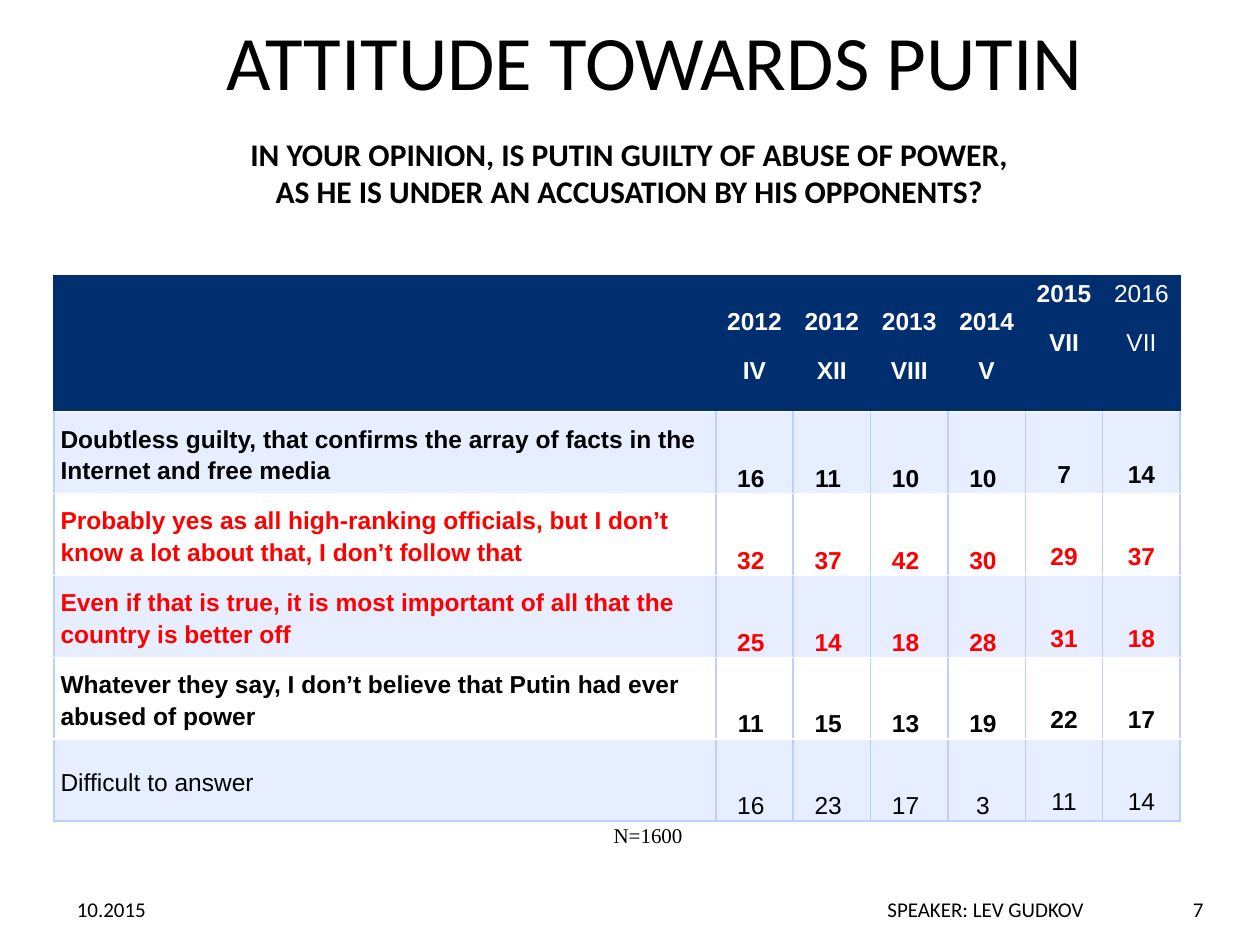
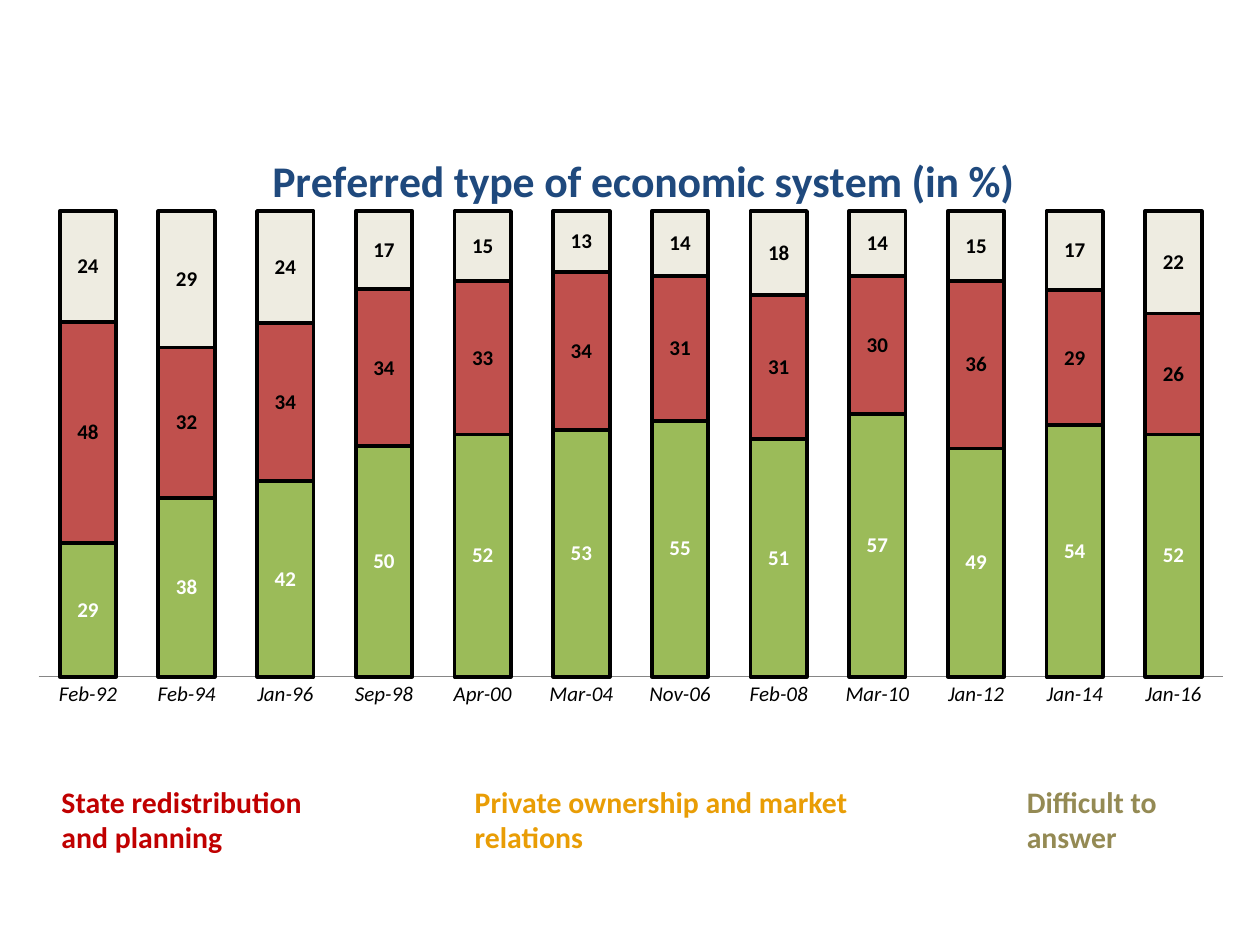
"""Two survey slides: a table of views on Putin and a chart of economic choices."""
from lxml.etree import SubElement
from pptx import Presentation
from pptx.chart.data import CategoryChartData
from pptx.dml.color import RGBColor
from pptx.enum.chart import XL_CHART_TYPE, XL_LABEL_POSITION, XL_TICK_MARK
from pptx.enum.text import MSO_ANCHOR, MSO_AUTO_SIZE, PP_ALIGN
from pptx.oxml import parse_xml
from pptx.oxml.ns import nsdecls, qn
from pptx.util import Cm, Pt

BLACK = RGBColor(0x00, 0x00, 0x00)
WHITE = RGBColor(0xFF, 0xFF, 0xFF)
NAVY = RGBColor(0x00, 0x2E, 0x6E)
PALE = RGBColor(0xE7, 0xEE, 0xFF)
EDGE = RGBColor(0xBA, 0xD1, 0xFF)
RED = RGBColor(0xFF, 0x00, 0x00)
BLUE = RGBColor(0x1F, 0x49, 0x7D)
GREEN = RGBColor(0x9B, 0xBB, 0x59)
BRICK = RGBColor(0xC0, 0x50, 0x4D)
CREAM = RGBColor(0xEE, 0xEC, 0xE1)
WINE = RGBColor(0xC0, 0x00, 0x00)
AMBER = RGBColor(0xE9, 0x9D, 0x05)
OLIVE = RGBColor(0x94, 0x8A, 0x54)
GREY = RGBColor(0x86, 0x86, 0x86)

LEFT, MID, RIGHT = PP_ALIGN.LEFT, PP_ALIGN.CENTER, PP_ALIGN.RIGHT
BASE = {"name": "Calibri", "size": 12, "bold": False, "color": BLACK}
CELL = {"name": "Arial", "size": 14}
SPACED = {"line_spacing": 1.15, "space_after": Pt(10)}

DATES = ["2012\nIV", "2012\nXII", "2013\nVIII", "2014\nV", "2015\nVII", "2016\nVII"]
VIEWS = [
    ("Doubtless guilty, that confirms the array of facts in the Internet and free media",
     [16, 11, 10, 10, 7, 14], {"bold": True}),
    ("Probably yes as all high-ranking officials, but I don’t know a lot about that, "
     "I don’t follow that", [32, 37, 42, 30, 29, 37], {"bold": True, "color": RED}),
    ("Even if that is true, it is most important of all that the country is better off",
     [25, 14, 18, 28, 31, 18], {"bold": True, "color": RED}),
    ("Whatever they say, I don’t believe that Putin had ever abused of power",
     [11, 15, 13, 19, 22, 17], {"bold": True}),
    ("Difficult to answer", [16, 23, 17, 3, 11, 14], {}),
]
MONTHS = ["Feb-92", "Feb-94", "Jan-96", "Sep-98", "Apr-00", "Mar-04",
          "Nov-06", "Feb-08", "Mar-10", "Jan-12", "Jan-14", "Jan-16"]
PARTS = [
    ("Series 1", [29, 38, 42, 50, 52, 53, 55, 51, 57, 49, 54, 52], GREEN, WHITE),
    ("Series 2", [48, 32, 34, 34, 33, 34, 31, 31, 30, 36, 29, 26], BRICK, BLACK),
    ("Series 3", [24, 29, 24, 17, 15, 13, 14, 18, 14, 15, 17, 22], CREAM, BLACK),
]
KEYS = [
    ("State redistribution and planning", 0.99, 6.35, WINE),
    ("Private ownership and market relations", 9.32, 9.4, AMBER),
    ("Difficult to answer", 20.45, 3.61, OLIVE),
]


class Deck:
    """Holds the shared style and the slide being built."""

    def __init__(self):
        self.prs = Presentation()
        self.prs.slide_width, self.prs.slide_height = Cm(25.4), Cm(19.05)
        self.slide = None

    def add(self, kind):
        """Start a slide on the given layout."""
        self.slide = self.prs.slides.add_slide(self.prs.slide_layouts[kind])

    def style(self, font, **fmt):
        """Set font values over the base style."""
        fmt = BASE | fmt
        font.color.rgb = fmt.pop("color")
        fmt["size"] = Pt(fmt["size"])
        for key, value in fmt.items():
            setattr(font, key, value)

    def put(self, frame, text, align=LEFT, space=None, **fmt):
        """Fill a frame with one paragraph a line."""
        for i, line in enumerate(text.split("\n")):
            para = frame.add_paragraph() if i else frame.paragraphs[0]
            para.alignment = align
            for key, value in (space or {}).items():
                setattr(para, key, value)
            run = para.add_run()
            run.text = line
            self.style(run.font, **fmt)

    def title(self, text, box):
        """Move and fill the title placeholder."""
        shape = self.slide.shapes.title
        for key, value in zip(("left", "top", "width", "height"), box):
            setattr(shape, key, Cm(value))
        shape.text_frame.auto_size = MSO_AUTO_SIZE.NONE
        shape.text_frame.vertical_anchor = MSO_ANCHOR.MIDDLE
        self.put(shape.text_frame, text, RIGHT, size=44)

    def text(self, text, box, align=LEFT, anchor=MSO_ANCHOR.TOP, wrap=True, **fmt):
        """Add a text box."""
        frame = self.slide.shapes.add_textbox(*map(Cm, box)).text_frame
        frame.word_wrap, frame.vertical_anchor = wrap, anchor
        self.put(frame, text, align, **fmt)

    def footer(self, date, name, page):
        """Add the date, speaker and page number."""
        for text, left, width, align in ((date, 1.3, 2.59, LEFT),
                                         (name, 4.29, 17.81, RIGHT),
                                         (page, 22.71, 1.8, RIGHT)):
            self.text(text, (left, 17.93, width, 0.81), align, MSO_ANCHOR.MIDDLE)

    def cell(self, cell, text, fill, edge, sides, align, anchor, pads, **fmt):
        """Fill, pad and border one table cell."""
        cell.fill.solid()
        cell.fill.fore_color.rgb = fill
        cell.vertical_anchor = anchor
        for key, value in zip(("left", "top", "right", "bottom"), pads):
            setattr(cell, f"margin_{key}", Cm(value))
        if text:
            self.put(cell.text_frame, text, align, SPACED, **CELL | fmt)
        props = cell._tc.get_or_add_tcPr()
        for i, side in enumerate(sides):
            props.insert(i, parse_xml(
                f'<a:ln{side} {nsdecls("a")} w="12700"><a:solidFill>'
                f'<a:srgbClr val="{edge}"/></a:solidFill></a:ln{side}>'))

    def table(self, dates, rows):
        """Add the table of answers by date."""
        count = len(dates)
        grid = self.slide.shapes.add_table(
            len(rows) + 1, count + 1, Cm(1.09), Cm(5.56), Cm(22.7), Cm(10.99)).table
        grid.horz_banding = False
        for i, col in enumerate(grid.columns):
            col.width = Cm(1.56 if i else 13.34)
        for i, row in enumerate(grid.rows):
            row.height = Cm(1.65 if i else 2.74)
        for c, date in enumerate(["", *dates]):
            late = c > count - 2
            anchor = MSO_ANCHOR.TOP if late else MSO_ANCHOR.MIDDLE
            pads = (0, 0, 0, 0) if late else (0.13, 0.03, 0.13, 0)
            self.cell(grid.cell(0, c), date, NAVY, NAVY, "LRTB", MID, anchor, pads,
                      color=WHITE, bold=c < count)
        for r, (label, values, fmt) in enumerate(rows, 1):
            fill = PALE if r % 2 else WHITE
            self.cell(grid.cell(r, 0), label, fill, EDGE, "LRB", LEFT,
                      MSO_ANCHOR.MIDDLE, (0.13, 0.03, 0.13, 0), **fmt)
            for c, value in enumerate(values, 1):
                pads = (0, 0, 0, 0.1) if c > count - 2 else (0.13, 0, 0.28, 0.02)
                self.cell(grid.cell(r, c), str(value), fill, EDGE, "LRB", MID,
                          MSO_ANCHOR.BOTTOM, pads, **fmt)

    def place(self, node, index, **spots):
        """Give a chart part a fixed place."""
        for old in node.findall(qn("c:layout")):
            node.remove(old)
        plan = parse_xml(f'<c:layout {nsdecls("c")}><c:manualLayout/></c:layout>')
        for key, value in spots.items():
            SubElement(plan[0], qn(f"c:{key}")).set("val", str(value))
        node.insert(index, plan)

    def chart(self, title, months, parts, box):
        """Add the stacked column chart."""
        data = CategoryChartData()
        data.categories = months
        for name, values, *_ in parts:
            data.add_series(name, values)
        chart = self.slide.shapes.add_chart(
            XL_CHART_TYPE.COLUMN_STACKED_100, *map(Cm, box), data).chart
        self.style(chart.font, size=10)
        chart.has_legend = False
        self.put(chart.chart_title.text_frame, title, MID, size=25, bold=True, color=BLUE)
        self.place(chart.chart_title._element, 1, xMode="edge", yMode="edge", x=0.2, y=0.04)
        self.place(chart._chartSpace.chart.plotArea, 0, layoutTarget="inner", xMode="edge",
                   yMode="edge", x=0.015, y=0.147, w=0.97, h=0.739)
        chart.value_axis.visible = False
        chart.value_axis.has_major_gridlines = False
        axis = chart.category_axis
        axis.major_tick_mark = XL_TICK_MARK.NONE
        axis.format.line.color.rgb = GREY
        self.style(axis.tick_labels.font, italic=True)
        plot = chart.plots[0]
        plot.gap_width, plot.overlap, plot.vary_by_categories = 75, 100, False
        for series, (*_, fill, ink) in zip(plot.series, parts):
            series.format.fill.solid()
            series.format.fill.fore_color.rgb = fill
            series.format.line.color.rgb = BLACK
            series.format.line.width = Pt(2.25)
            labels = series.data_labels
            for key, value in {"show_value": True, "number_format": "0",
                               "number_format_is_linked": False,
                               "position": XL_LABEL_POSITION.CENTER}.items():
                setattr(labels, key, value)
            self.style(labels.font, bold=True, color=ink)


def main():
    """Build both slides and save them."""
    deck = Deck()
    deck.add(5)
    deck.title("ATTITUDE TOWARDS PUTIN", (2.39, 0, 19.71, 2.39))
    deck.text("IN YOUR OPINION, IS PUTIN GUILTY OF ABUSE OF POWER,\n"
              "AS HE IS UNDER AN ACCUSATION BY HIS OPPONENTS?",
              (0.58, 2.59, 24.21, 1.8), MID, size=18, bold=True)
    deck.table(DATES, VIEWS)
    deck.text("N=1600", (12.12, 16.46, 1.9, 0.76), anchor=MSO_ANCHOR.MIDDLE, wrap=False,
              name="Times New Roman")
    deck.footer("10.2015", "SPEAKER: LEV GUDKOV", "7")

    deck.add(6)
    deck.chart("Preferred type of economic system (in %)", MONTHS, PARTS,
               (0.41, 2.39, 24.61, 12.7))
    for text, left, width, color in KEYS:
        deck.text(text, (left, 15.67, width, 1.7), size=17, bold=True, color=color)
    deck.prs.save("out.pptx")


if __name__ == "__main__":
    main()
